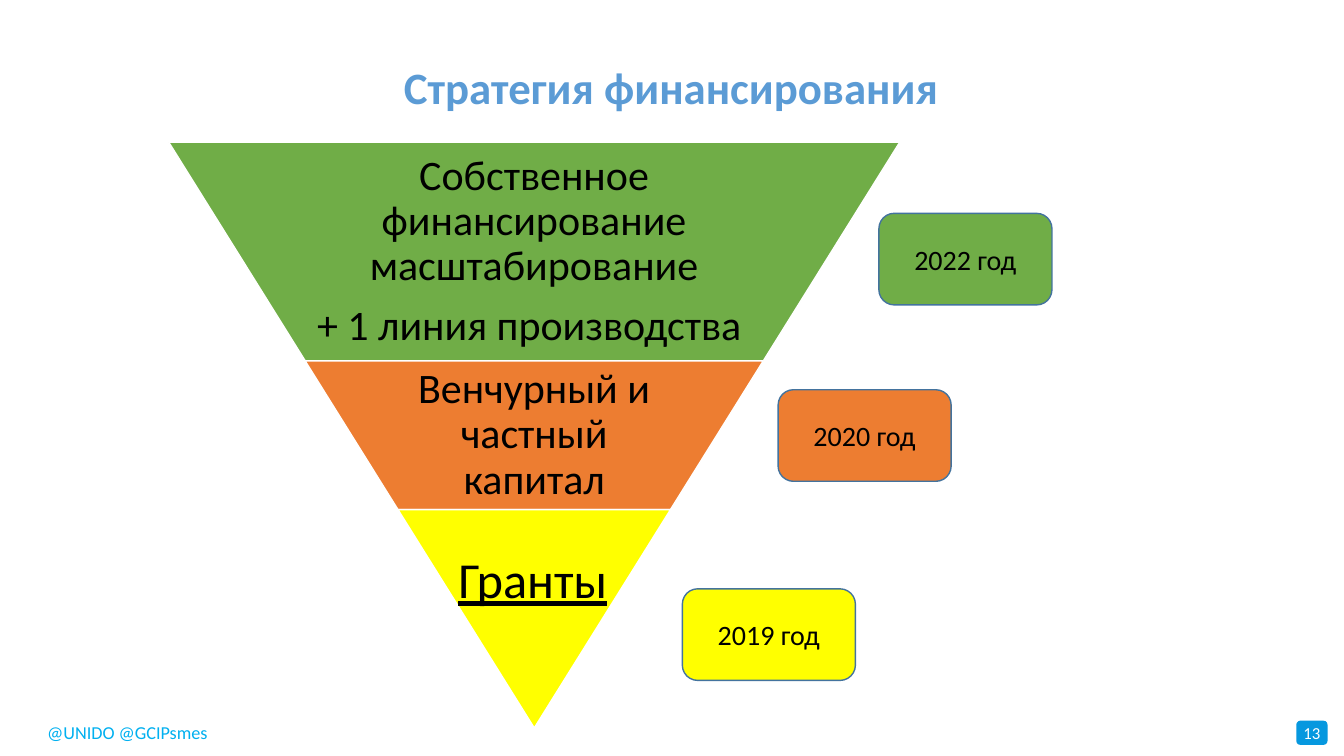
from pptx import Presentation
from pptx.dml.color import RGBColor as Rgb
from pptx.enum.shapes import MSO_SHAPE as Kind
from pptx.enum.text import MSO_ANCHOR as Anchor, PP_ALIGN as Align
from pptx.util import Inches, Pt

# Slide grid of square cells
WIDE, HIGH = Inches(13.333), Inches(7.5)
COLS, ROWS = 160, 90

HUES = {
    "title": "5B9BD5", "foot": "00B0F0", "page": "0698DF",
    "green": "70AD47", "orange": "ED7D31", "yellow": "FFFF00",
    "edge": "43739E", "white": "FFFFFF", "black": "000000",
}

# Funnel: the sides narrow by SLOPE columns per row down to the tip
MID, TOP, SLOPE = 63.6, 16.92, 0.624
TEXT_SHARE = 0.65
LEVELS = [
    ("green", 26.04, ["Собственное финансирование масштабирование",
                      "+ 1 линия производства "]),
    ("orange", 17.7, ["Венчурный и частный капитал"]),
    ("yellow", 26, []),
]
BADGES = [
    ("2019 год", "yellow", 81.24, 70.1),
    ("2020 год", "orange", 92.64, 46.4),
    ("2022 год", "green", 104.64, 25.4),
]


def hue(name):
    return Rgb.from_string(HUES[name])


def place(col, row, cols, rows):
    return [int(n) for n in (WIDE * col / COLS, HIGH * row / ROWS,
                             WIDE * cols / COLS, HIGH * rows / ROWS)]


def write(shape, lines, size, color="black", bold=False, under=False,
          align=Align.CENTER, anchor=Anchor.MIDDLE, wrap=True,
          pad=(0.1, 0.05), lead=None, after=None):
    frame = shape.text_frame
    frame.word_wrap = wrap
    frame.vertical_anchor = anchor
    frame.margin_left = frame.margin_right = Inches(pad[0])
    frame.margin_top = frame.margin_bottom = Inches(pad[1])
    for i, line in enumerate(lines):
        para = frame.add_paragraph() if i else frame.paragraphs[0]
        para.alignment, para.line_spacing = align, lead
        if after:
            para.space_after = Pt(after)
        run = para.add_run()
        run.text = line
        font = run.font
        font.name, font.size, font.bold = "Calibri", Pt(size), bold
        font.underline = under
        font.color.rgb = hue(color)


def label(slide, box, lines, size, **style):
    write(slide.shapes.add_textbox(*place(*box)), lines, size, **style)


def block(slide, kind, box, fill, edge=None):
    shape = slide.shapes.add_shape(kind, *place(*box))
    shape.shadow.inherit = False
    shape.fill.solid()
    shape.fill.fore_color.rgb = hue(fill)
    if edge:
        shape.line.color.rgb = hue(edge)
        shape.line.width = Pt(1)
    else:
        shape.line.fill.background()
    return shape


def funnel(slide):
    row, left = TOP, sum(level[1] for level in LEVELS)
    for fill, rows, lines in LEVELS:
        cols = 2 * SLOPE * left
        box = (MID - cols / 2, row, cols, rows)
        part = block(slide, Kind.TRAPEZOID, box, fill, "white")
        part.adjustments[0] = SLOPE
        part.rotation = 180
        if lines:
            span = cols * TEXT_SHARE
            label(slide, (MID - span / 2, row, span, rows), lines, 30,
                  pad=(0.04, 0.04), lead=0.9, after=10)
        row, left = row + rows, left - rows


def main():
    deck = Presentation()
    deck.slide_width, deck.slide_height = WIDE, HIGH
    slide = deck.slides.add_slide(deck.slide_layouts[6])

    # Footer and page number
    label(slide, (4.44, 85.32, 21.72, 3.84), ["@UNIDO @GCIPsmes"], 13,
          color="foot", align=Align.LEFT, anchor=Anchor.TOP, wrap=False)
    page = block(slide, Kind.ROUNDED_RECTANGLE,
                 (154.32, 85.8, 3.72, 2.88), "page")
    write(page, ["13"], 12, color="white", pad=(0, 0))

    # Title
    label(slide, (28.2, 4.8, 103.44, 11.88), ["Стратегия финансирования"],
          32, color="title", bold=True, lead=0.9)

    # Funnel with the word at its tip
    funnel(slide)
    label(slide, (53.4, 64.68, 21.48, 8.52), ["Гранты"], 36, under=True,
          align=Align.LEFT, anchor=Anchor.TOP)

    # Year badges
    for text, fill, col, row in BADGES:
        badge = block(slide, Kind.ROUNDED_RECTANGLE,
                      (col, row, 20.6, 10.9), fill, "edge")
        write(badge, [text], 20)

    deck.save("out.pptx")


if __name__ == "__main__":
    main()
